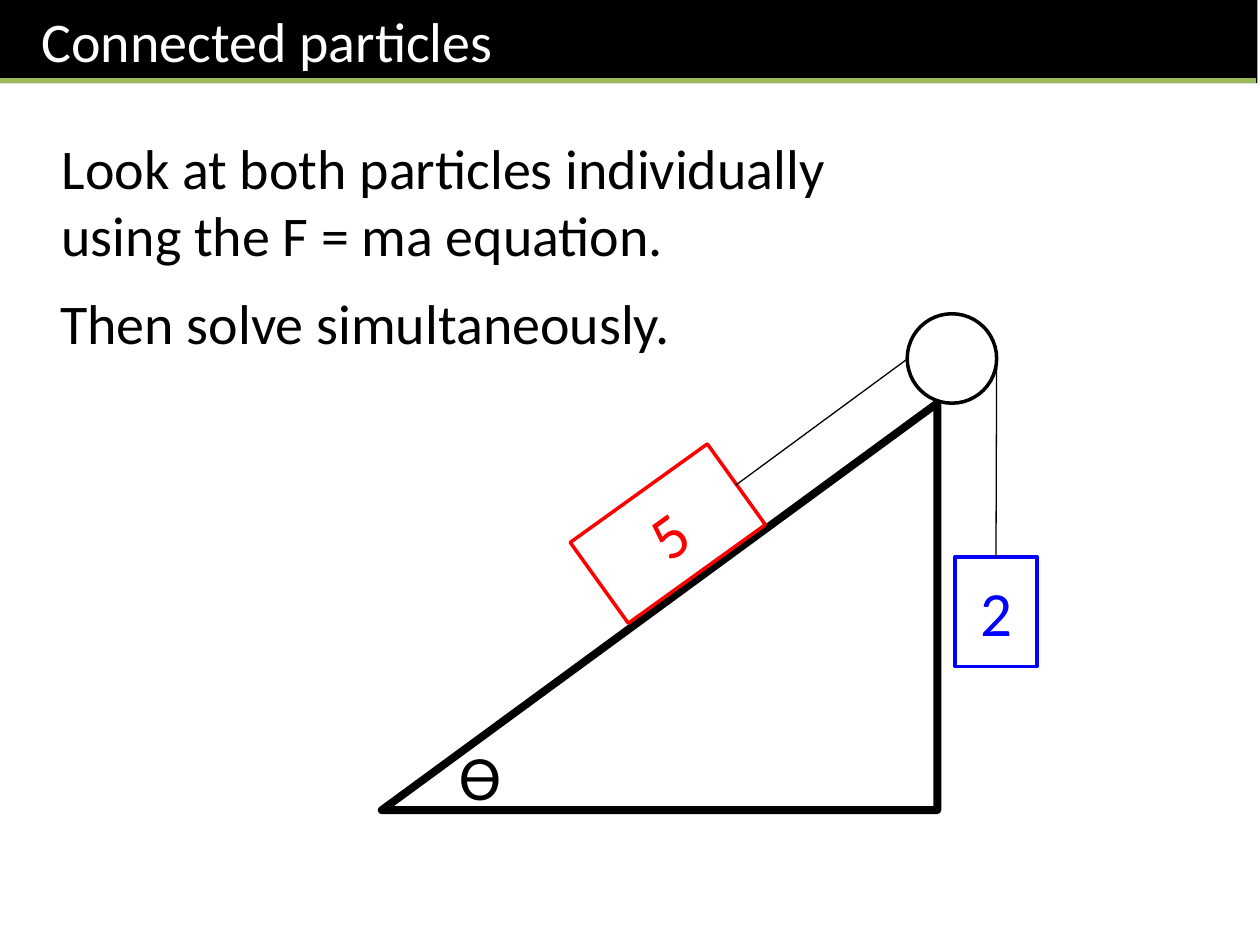
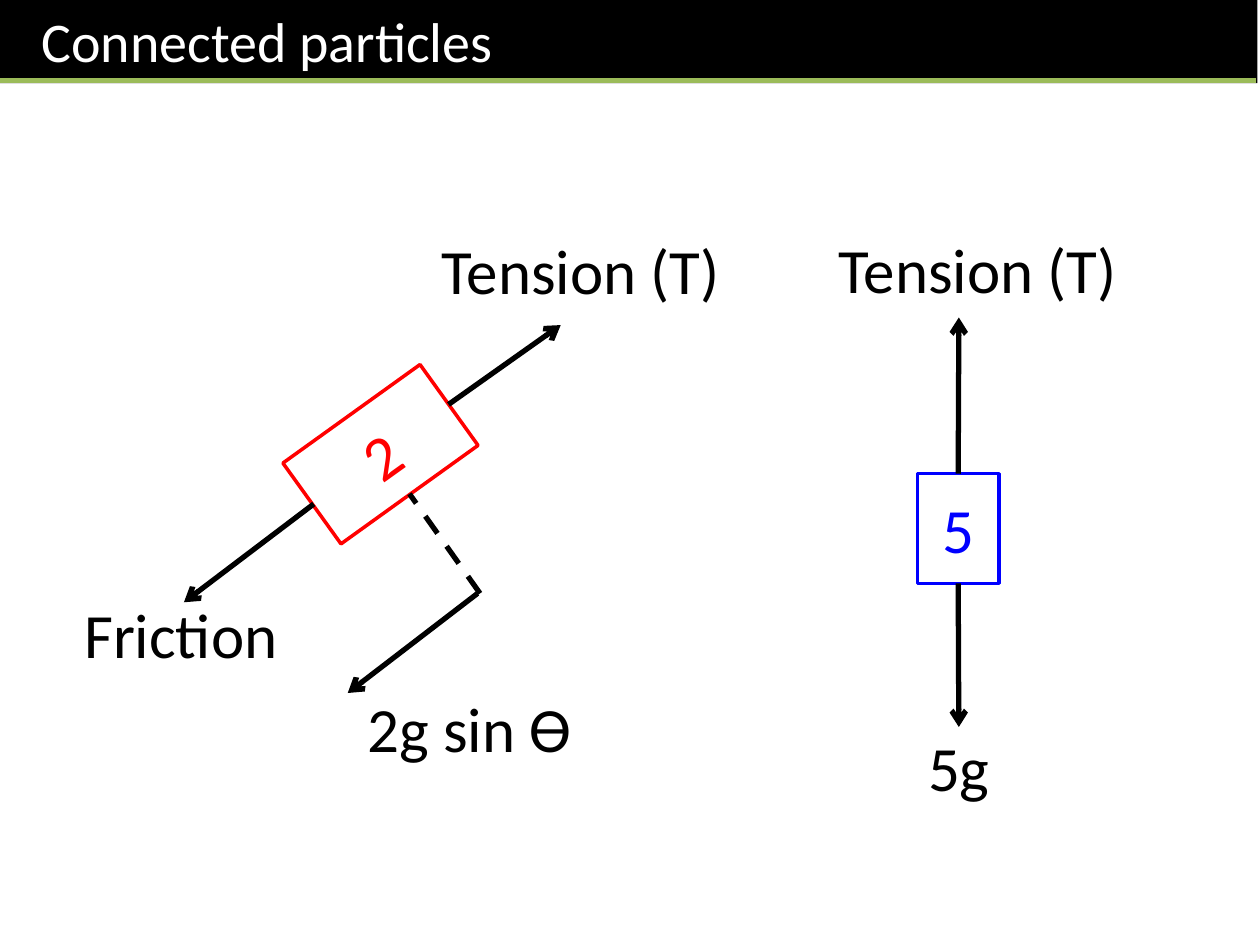
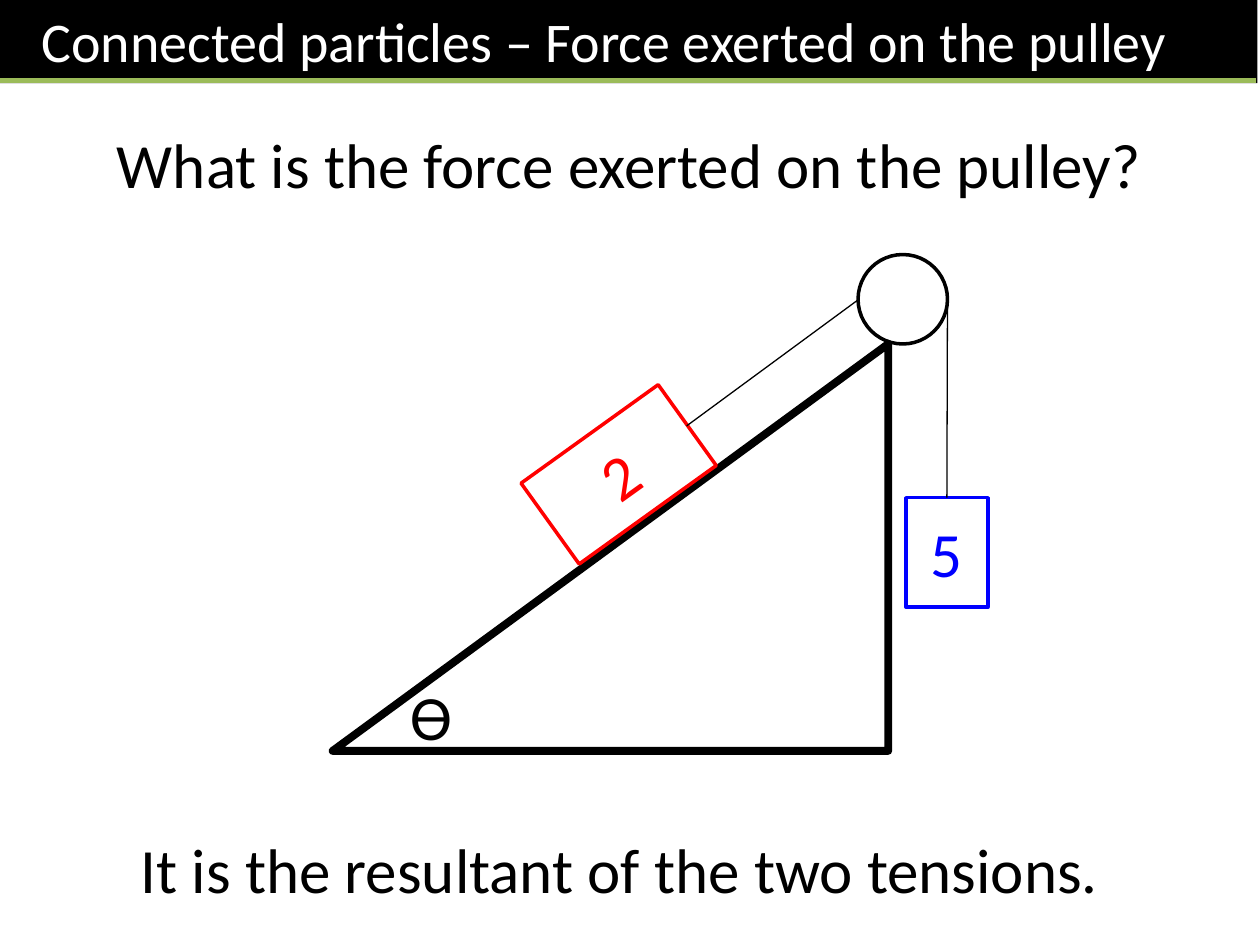
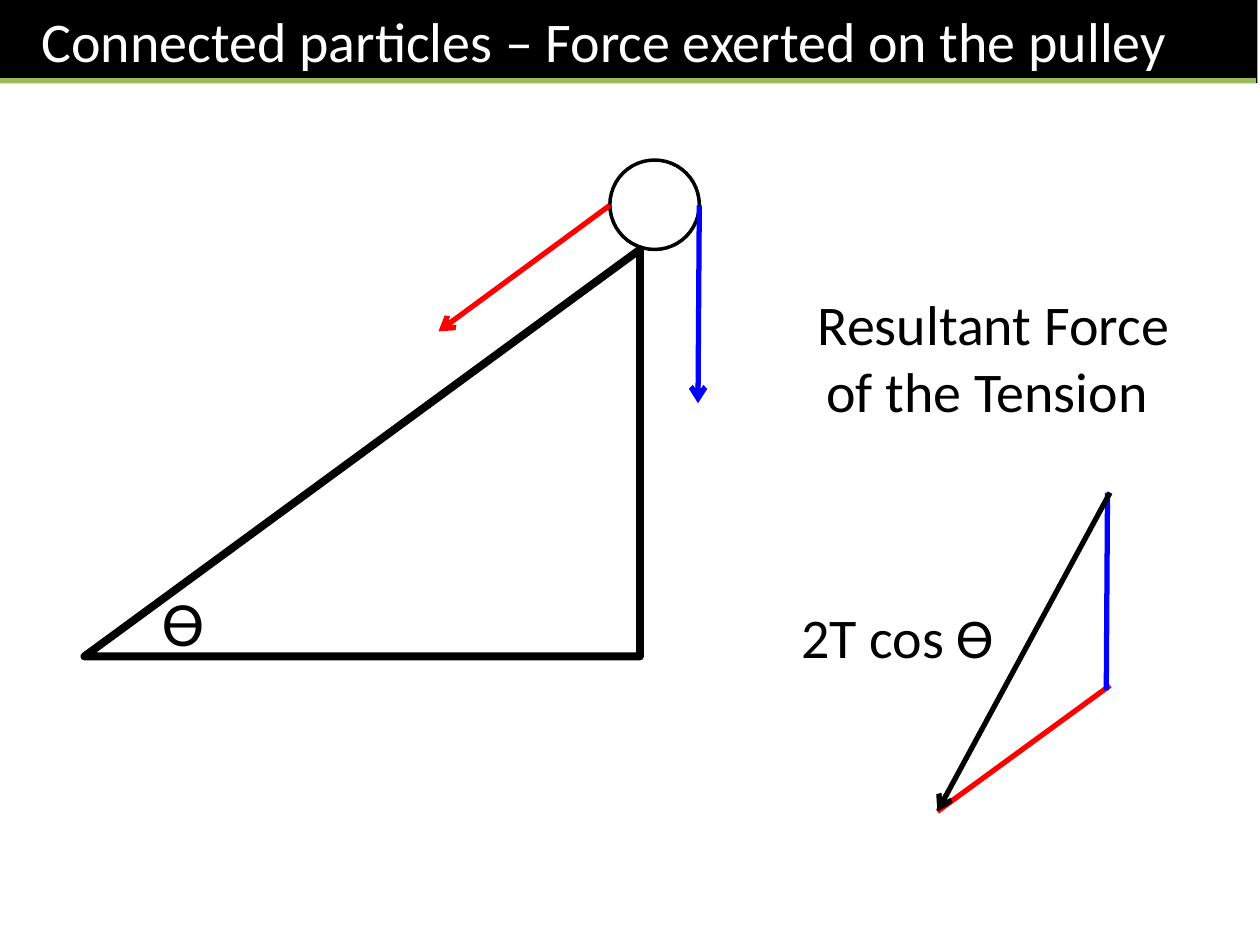
from dataclasses import dataclass

from lxml import etree
from pptx import Presentation
from pptx.dml.color import RGBColor
from pptx.enum import dml, shapes, text
from pptx.oxml import ns
from pptx.util import Inches, Pt

FONT = "Calibri"
BLACK, WHITE, GREEN = "000000", "FFFFFF", "9BBB59"
RED, BLUE = "FF0000", "0000FF"
LEFT, MID = text.PP_ALIGN.LEFT, text.PP_ALIGN.CENTER
SHAPE = shapes.MSO_SHAPE
TOP, BOTTOM = 0, 2
SLOPE = 324.3


@dataclass
class Label:
    words: str
    x: float
    y: float
    w: float
    h: float = 0.71
    size: int = 36
    align: text.PP_ALIGN = MID


@dataclass
class Line:
    x1: float
    y1: float
    x2: float
    y2: float
    color: str = BLACK
    width: float = 3
    arrow: bool = False
    dash: bool = False


def rgb(color: str) -> RGBColor:
    return RGBColor.from_string(color)


def style(frame, size: float, color: str, align=MID) -> None:
    for para in frame.paragraphs:
        para.alignment = align
        for run in para.runs:
            run.font.name = FONT
            run.font.size = Pt(size)
            run.font.color.rgb = rgb(color)


def add_line(slide, line: Line):
    ends = [Inches(v) for v in (line.x1, line.y1, line.x2, line.y2)]
    link = slide.shapes.add_connector(shapes.MSO_CONNECTOR.STRAIGHT, *ends)
    link.line.color.rgb = rgb(line.color)
    link.line.width = Pt(line.width)
    if line.dash:
        link.line.dash_style = dml.MSO_LINE.DASH
    if line.arrow:
        tail = etree.SubElement(link.line._get_or_add_ln(), ns.qn("a:tailEnd"))
        tail.set("type", "arrow")
    etree.SubElement(link._element.spPr, ns.qn("a:effectLst"))
    return link


def add_label(slide, label: Label) -> None:
    place = [Inches(v) for v in (label.x, label.y, label.w, label.h)]
    frame = slide.shapes.add_textbox(*place).text_frame
    frame.word_wrap = True
    frame.text = label.words
    style(frame, label.size, BLACK, label.align)


def add_form(slide, kind, x: float, y: float, w: float, h: float,
             color: str = BLACK, width: float = 2):
    """Add an unfilled outline shape."""
    form = slide.shapes.add_shape(kind, Inches(x), Inches(y), Inches(w), Inches(h))
    form.shadow.inherit = False
    form.fill.background()
    form.line.color.rgb = rgb(color)
    form.line.width = Pt(width)
    return form


def add_mass(slide, words: str, x: float, y: float, w: float, h: float, color: str):
    mass = add_form(slide, SHAPE.RECTANGLE, x, y, w, h, color)
    frame = mass.text_frame
    frame.text = words
    frame.vertical_anchor = text.MSO_ANCHOR.MIDDLE
    style(frame, 36, color)
    return mass


def add_block(slide, words: str, x: float, y: float) -> None:
    """Add the red mass that lies along the slope."""
    add_mass(slide, words, x, y, 1.34, 0.79, RED).rotation = SLOPE


def add_weight(slide, words: str, x: float, y: float):
    """Add the blue mass that hangs from the string."""
    return add_mass(slide, words, x, y, 0.65, 0.87, BLUE)


def add_wedge(slide, x: float, y: float) -> None:
    """Add the slope, its angle and the pulley on top."""
    wedge = add_form(slide, SHAPE.RIGHT_TRIANGLE, x, y, 4.41, 3.23, width=4.5)
    wedge._element.spPr.get_or_add_xfrm().set("flipH", "1")
    add_form(slide, SHAPE.OVAL, x + 4.17, y - 0.71, 0.71, 0.71)
    add_label(slide, Label("ϴ", x + 0.47, y + 2.6, 0.63))


def add_strings(slide, x: float, y: float, colors=(BLACK, BLACK),
                width: float = 0.75, arrow: bool = False):
    """Add both strings, drawn from the pulley, and return the hanging one."""
    add_line(slide, Line(x + 4.17, y - 0.35, x + 2.81, y + 0.65, colors[0], width, arrow))
    return add_line(slide, Line(x + 4.88, y - 0.35, x + 4.87, y + 1.22, colors[1], width, arrow))


def add_system(slide, x: float, y: float, block: str, weight: str) -> None:
    add_wedge(slide, x, y)
    add_block(slide, block, x + 1.6, y + 0.64)
    load = add_weight(slide, weight, x + 4.55, y + 1.22)
    add_strings(slide, x, y).end_connect(load, TOP)


def add_page(deck, words: str):
    """Add a slide with the black title band and its green rule."""
    slide = deck.slides.add_slide(deck.slide_layouts.get_by_name("Title Only"))
    title = slide.shapes.title
    title.left, title.top = Inches(-0.02), Inches(0)
    title.width, title.height = Inches(10), Inches(0.66)
    title.fill.solid()
    title.fill.fore_color.rgb = rgb(BLACK)
    frame = title.text_frame
    frame.text = words
    frame.auto_size = text.MSO_AUTO_SIZE.NONE
    frame.vertical_anchor = text.MSO_ANCHOR.TOP
    frame.margin_left = Inches(0.35)
    style(frame, 32, WHITE, LEFT)
    add_line(slide, Line(-0.02, 0.64, 9.97, 0.64, GREEN))
    return slide


def method(deck) -> None:
    slide = add_page(deck, "Connected particles")
    add_system(slide, 3.03, 3.2, "5", "2")
    add_label(slide, Label("Look at both particles individually\nusing the F = ma equation.",
                           0.39, 1.01, 6.73, 1.18, 32, LEFT))
    add_label(slide, Label("Then solve simultaneously.", 0.38, 2.24, 5.11, 0.64, 32, LEFT))


def forces(deck) -> None:
    slide = add_page(deck, "Connected particles")
    add_block(slide, "2", 2.35, 3.21)
    load = add_weight(slide, "5", 7.28, 3.76)
    for line in (
        Line(3.56, 3.21, 4.45, 2.58, arrow=True),
        Line(2.49, 4, 1.46, 4.78, arrow=True),
        Line(3.79, 4.71, 2.76, 5.5, arrow=True),
        Line(3.81, 4.71, 3.25, 3.92, dash=True),
    ):
        add_line(slide, line)
    for side, start, end in ((TOP, 3.76, 2.52), (BOTTOM, 4.63, 5.77)):
        pull = add_line(slide, Line(7.61, start, 7.61, end, arrow=True))
        pull.begin_connect(load, side)
    for label in (
        Label("5g", 7.1, 5.73, 1.02),
        Label("Tension (T)", 6.5, 1.78, 2.52),
        Label("Tension (T)", 3.35, 1.79, 2.52),
        Label("Friction", 0.49, 4.68, 1.89),
        Label("2g sin ϴ ", 2.78, 5.42, 1.89),
    ):
        add_label(slide, label)


def pulley(deck) -> None:
    slide = add_page(deck, "Connected particles – Force exerted on the pulley")
    add_system(slide, 2.64, 2.73, "2", "5")
    add_label(slide, Label("What is the force exerted on the pulley?",
                           0.83, 0.95, 8.58, align=LEFT))
    add_label(slide, Label("It is the resultant of the two tensions. ", 0.84, 6.54, 8.27))


def result(deck) -> None:
    slide = add_page(deck, "Connected particles – Force exerted on the pulley")
    add_wedge(slide, 0.67, 1.98)
    add_strings(slide, 0.67, 1.98, (RED, BLUE), 3, arrow=True)
    for line in (
        Line(7.44, 6.44, 8.81, 5.44, RED),
        Line(8.78, 5.48, 8.79, 3.91, BLUE),
        Line(8.81, 3.91, 7.44, 6.44, arrow=True),
    ):
        add_line(slide, line)
    add_label(slide, Label("Resultant Force of the Tension ", 6.39, 2.25, 2.99, 1.18, 32))
    add_label(slide, Label("2T cos ϴ", 6.26, 4.73, 1.8, 0.64, 32, LEFT))


def main() -> None:
    deck = Presentation()
    deck.slide_width, deck.slide_height = Inches(10), Inches(7.5)
    for build in (method, forces, pulley, result):
        build(deck)
    deck.save("out.pptx")


if __name__ == "__main__":
    main()
